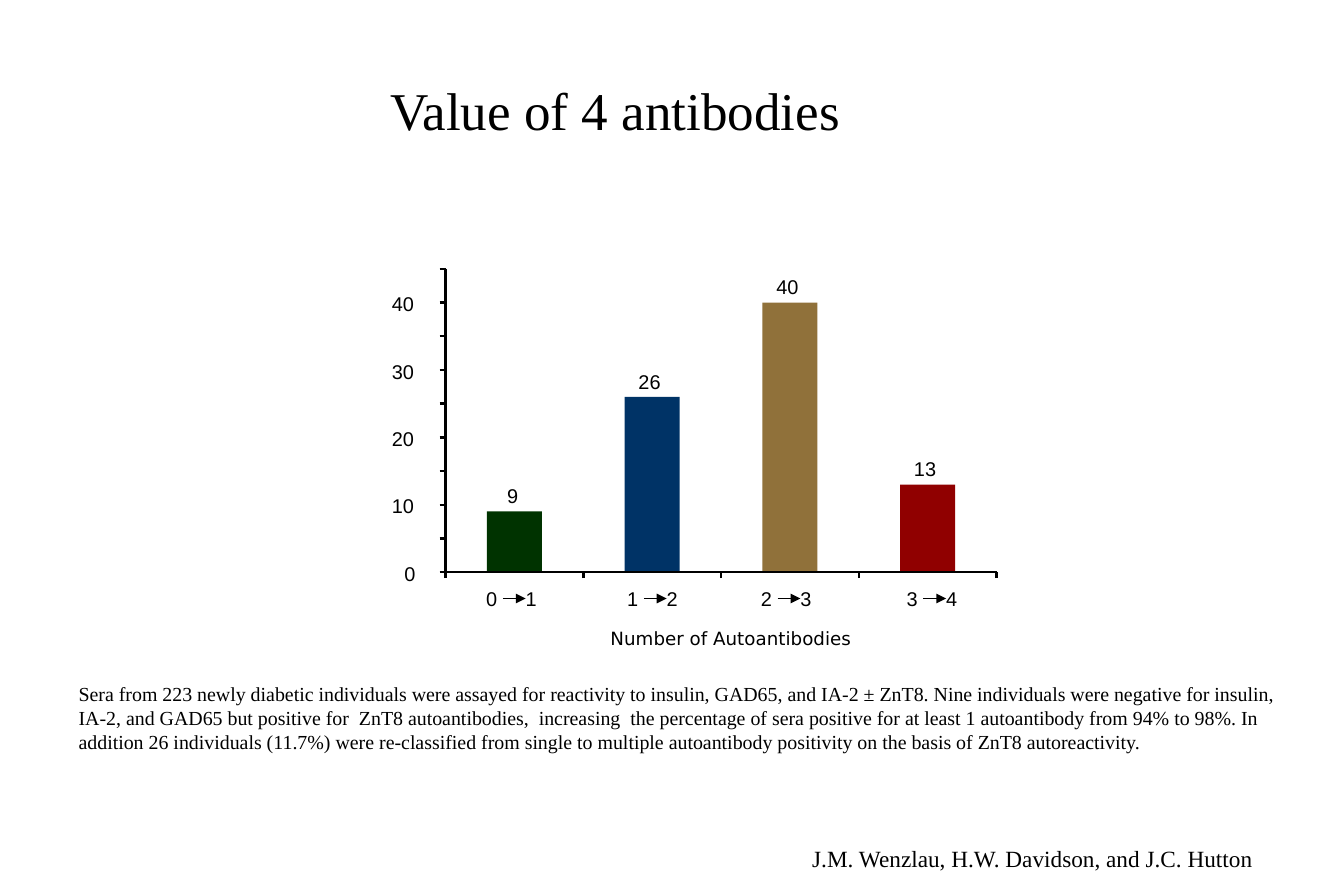
from lxml.etree import SubElement
from pptx import Presentation
from pptx.dml.color import RGBColor
from pptx.enum.shapes import MSO_CONNECTOR as Connector, MSO_SHAPE as Shape
from pptx.enum.text import MSO_ANCHOR as Anchor, PP_ALIGN as Align
from pptx.oxml.ns import qn
from pptx.util import Inches, Pt

BLACK = "000000"
SERIF = "Times New Roman"
SANS = "Arial"
AXIS_LEFT, AXIS_TOP, AXIS_BOTTOM = 3.73, 2.25, 4.79
COUNT_MAX = 45
BAR_PITCH, BAR_WIDTH = 1.153, 0.46
TICK = 0.05
DIGIT_WIDTH, LABEL_HEIGHT = 0.105, 0.2
CONVERSIONS = [
    (9, "003300", 4.07),
    (26, "003366", 5.25),
    (40, "90713A", 6.37),
    (13, "900000", 7.59),
]
FINDINGS = (
    "Sera from 223 newly diabetic individuals were assayed for reactivity to insulin, "
    "GAD65, and IA-2 ± ZnT8. Nine individuals were negative for insulin, IA-2, and GAD65 "
    "but positive for  ZnT8 autoantibodies,  increasing  the percentage of sera positive "
    "for at least 1 autoantibody from 94% to 98%. In addition 26 individuals (11.7%) were "
    "re-classified from single to multiple autoantibody positivity on the basis of ZnT8 "
    "autoreactivity."
)


def color(hex_code):
    return RGBColor.from_string(hex_code)


def count_height(count):
    return AXIS_BOTTOM - count * (AXIS_BOTTOM - AXIS_TOP) / COUNT_MAX


def add_text(shapes, text, box, size, font_name=SERIF, align=Align.LEFT,
             anchor=Anchor.TOP, wrap=True):
    frame = shapes.add_textbox(*map(Inches, box)).text_frame
    frame.word_wrap = wrap
    frame.vertical_anchor = anchor
    frame.text = text
    paragraph = frame.paragraphs[0]
    paragraph.alignment = align
    for run in paragraph.runs:
        run.font.size = Pt(size)
        run.font.name = font_name
        run.font.color.rgb = color(BLACK)
    return frame


def add_label(shapes, text, box, size=12, font_name=SANS):
    frame = add_text(shapes, text, box, size, font_name, wrap=False)
    frame.margin_left = frame.margin_top = frame.margin_right = frame.margin_bottom = 0
    return frame


def add_line(shapes, start, end, width=1.5):
    line = shapes.add_connector(Connector.STRAIGHT, *map(Inches, start + end))
    line.line.color.rgb = color(BLACK)
    line.line.width = Pt(width)
    SubElement(line.element.spPr, qn("a:effectLst"))
    return line


def add_arrow(shapes, start, end):
    arrow = add_line(shapes, start, end, 0.75)
    SubElement(arrow.line._get_or_add_ln(), qn("a:tailEnd")).set("type", "triangle")


def add_bar(shapes, left, count, bar_fill):
    top = count_height(count)
    box = (left, top, BAR_WIDTH, AXIS_BOTTOM - top)
    bar = shapes.add_shape(Shape.RECTANGLE, *map(Inches, box))
    bar.shadow.inherit = False
    bar.fill.solid()
    bar.fill.fore_color.rgb = color(bar_fill)
    bar.line.fill.background()
    width = DIGIT_WIDTH * len(str(count))
    add_label(shapes, str(count),
              (left + (BAR_WIDTH - width) / 2 - 0.01, top - 0.23, width, LABEL_HEIGHT))


def add_conversion(shapes, before, left):
    frame = add_label(shapes, f"{before}\t{before + 1}", (left, 4.91, 0.47, LABEL_HEIGHT))
    tabs = SubElement(frame.paragraphs[0]._p.get_or_add_pPr(), qn("a:tabLst"))
    tab = SubElement(tabs, qn("a:tab"))
    tab.set("pos", str(Inches(0.33)))
    tab.set("algn", "l")
    add_arrow(shapes, (left + 0.14, 5.01), (left + 0.33, 5.01))


def add_axes(shapes):
    axis_right = AXIS_LEFT + BAR_PITCH * len(CONVERSIONS)
    add_line(shapes, (AXIS_LEFT, AXIS_BOTTOM), (axis_right, AXIS_BOTTOM))
    add_line(shapes, (AXIS_LEFT, AXIS_TOP), (AXIS_LEFT, AXIS_BOTTOM))
    for count in range(0, COUNT_MAX + 1, 5):
        height = count_height(count)
        add_line(shapes, (AXIS_LEFT - TICK, height), (AXIS_LEFT, height))
        if count % 10 == 0:
            width = DIGIT_WIDTH * len(str(count))
            add_label(shapes, str(count),
                      (3.49 - width, height - 0.09, width, LABEL_HEIGHT))
    for index in range(len(CONVERSIONS) + 1):
        left = AXIS_LEFT + index * BAR_PITCH
        add_line(shapes, (left, AXIS_BOTTOM + TICK), (left, AXIS_BOTTOM))


def add_antibody_chart(slide):
    shapes = slide.shapes.add_group_shape().shapes
    for index, (count, bar_fill, label_left) in enumerate(CONVERSIONS):
        bar_left = AXIS_LEFT + index * BAR_PITCH + (BAR_PITCH - BAR_WIDTH) / 2
        add_bar(shapes, bar_left, count, bar_fill)
        add_conversion(shapes, index, label_left)
    add_axes(shapes)
    add_label(shapes, "Number of Autoantibodies", (5.11, 5.25, 2.02, 0.18),
              11, "DejaVu Sans")


def main():
    deck = Presentation()
    deck.slide_width = Inches(11.25)
    deck.slide_height = Inches(7.5)
    slide = deck.slides.add_slide(deck.slide_layouts[6])
    add_text(slide.shapes, "Value of 4 antibodies", (2.43, 0.58, 5.44, 0.67), 32,
             align=Align.CENTER, anchor=Anchor.MIDDLE)
    add_antibody_chart(slide)
    add_text(slide.shapes, FINDINGS, (0.56, 5.66, 10.33, 0.9), 12)
    add_text(slide.shapes, "J.M. Wenzlau, H.W. Davidson, and J.C. Hutton",
             (6.7, 7.02, 4.41, 0.33), 14, wrap=False)
    deck.save("out.pptx")


if __name__ == "__main__":
    main()
